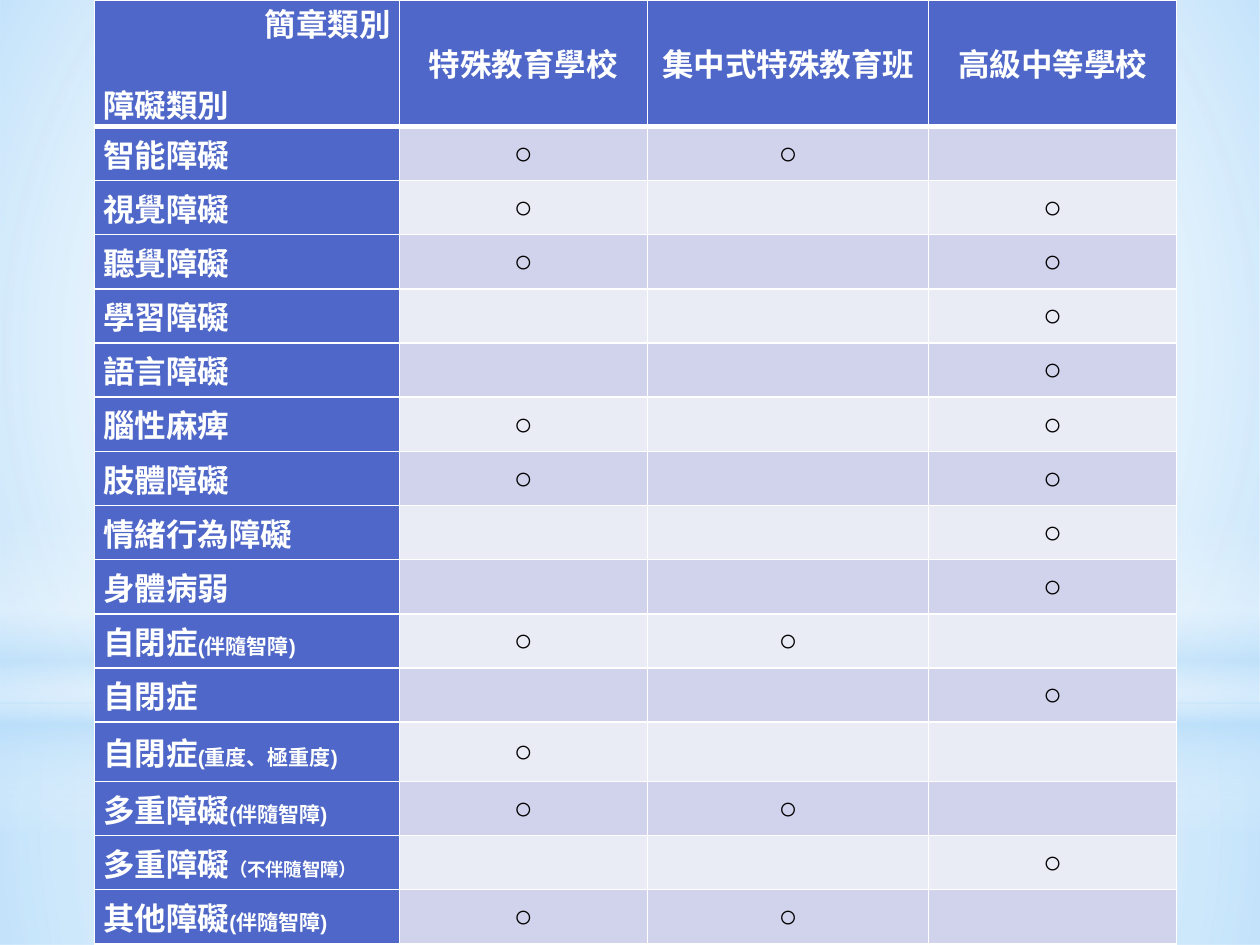
import pptx
import pptx.dml.color
import pptx.enum.shapes
import pptx.enum.text
import pptx.oxml
import pptx.oxml.ns
import pptx.util
from dataclasses import dataclass

Inches = pptx.util.Inches
Pt = pptx.util.Pt
Align = pptx.enum.text.PP_ALIGN
Shape = pptx.enum.shapes.MSO_SHAPE


@dataclass(frozen=True)
class Theme:
    """Colours, font and type sizes of the slide."""
    font: str = "Arial"
    white: str = "FFFFFF"
    black: str = "000000"
    sky: str = "B4DCFA"
    head: str = "4E67C8"
    bands: tuple = ("D0D3EB", "E9EBF5")
    size: float = 18
    note: float = 12
    small: float = 10.5


THEME = Theme()
COLS = (2.42, 1.97, 2.23, 1.97)
HEADS = ("特殊教育學校", "集中式特殊教育班", "高級中等學校")
ROWS = (
    ("智能障礙", "", (1, 2)),
    ("視覺障礙", "", (1, 3)),
    ("聽覺障礙", "", (1, 3)),
    ("學習障礙", "", (3,)),
    ("語言障礙", "", (3,)),
    ("腦性麻痺", "", (1, 3)),
    ("肢體障礙", "", (1, 3)),
    ("情緒行為障礙", "", (3,)),
    ("身體病弱", "", (3,)),
    ("自閉症", "(伴隨智障)", (1, 2)),
    ("自閉症", "", (3,)),
    ("自閉症", "(重度、極重度)", (1,)),
    ("多重障礙", "(伴隨智障)", (1, 2)),
    ("多重障礙", "（不伴隨智障）", (3,)),
    ("其他障礙", "(伴隨智障)", (1, 2)),
)
TALL = 12


def rgb(code):
    """Turn a hex code into a colour."""
    return pptx.dml.color.RGBColor.from_string(code)


def glow(slide, kind, box, stops, angle=None):
    """Add a shape with a translucent gradient, radial unless an angle is given."""
    shape = slide.shapes.add_shape(kind, *map(Inches, box))
    shape.shadow.inherit = False
    shape.line.fill.background()
    shape.fill.background()
    marks = "".join(
        f'<a:gs pos="{pos * 1000}"><a:srgbClr val="{code}">'
        f'<a:alpha val="{alpha * 1000}"/></a:srgbClr></a:gs>'
        for pos, code, alpha in stops)
    if angle is None:
        way = ('<a:path path="circle"><a:fillToRect l="50000" t="50000" '
               'r="50000" b="50000"/></a:path>')
    else:
        way = f'<a:lin ang="{angle * 60000}" scaled="0"/>'
    grad = pptx.oxml.parse_xml(
        f'<a:gradFill {pptx.oxml.ns.nsdecls("a")} rotWithShape="1">'
        f'<a:gsLst>{marks}</a:gsLst>{way}</a:gradFill>')
    props = shape.element.spPr
    props.replace(props.find(pptx.oxml.ns.qn("a:noFill")), grad)


def backdrop(slide):
    """Add the pale sky and its horizon."""
    white, sky = THEME.white, THEME.sky
    glow(slide, Shape.RECTANGLE, (0, 5.58, 10, 1.92),
         ((0, white, 91), (37, white, 76), (100, sky, 79)))
    glow(slide, Shape.RECTANGLE, (0, 0, 10, 5.58),
         ((0, white, 89), (48, white, 62), (100, sky, 79)))
    glow(slide, Shape.RECTANGLE, (0, 4.12, 10, 2.5),
         ((0, white, 0), (29, white, 30), (45, sky, 40),
          (55, white, 26), (65, sky, 60), (100, white, 0)), 90)
    glow(slide, Shape.OVAL, (0, 1.75, 10, 5.58),
         ((0, white, 100), (56, white, 0)))


def border(cell, top, bottom):
    """Draw white cell borders, with top and bottom widths in points."""
    props = cell._tc.get_or_add_tcPr()
    sides = (("L", 1), ("R", 1), ("T", top), ("B", bottom))
    for spot, (side, width) in enumerate(sides):
        props.insert(spot, pptx.oxml.parse_xml(
            f'<a:ln{side} {pptx.oxml.ns.nsdecls("a")} w="{Pt(width)}">'
            f'<a:solidFill><a:srgbClr val="{THEME.white}"/></a:solidFill>'
            f'</a:ln{side}>'))


def style(run, size, color, bold):
    """Format one run."""
    font = run.font
    font.name, font.size, font.bold = THEME.font, Pt(size), bold
    font.color.rgb = rgb(color)


def write(cell, text, align, color=THEME.white, bold=True):
    """Set the cell text and format each line."""
    frame = cell.text_frame
    frame.text = text
    for para in frame.paragraphs:
        para.alignment = align
        para.font.size = Pt(THEME.size)
        for run in para.runs:
            style(run, THEME.size, color, bold)


def corner(cell):
    """Label both axes in the corner cell."""
    write(cell, "簡章類別\n障礙類別", Align.LEFT)
    first, last = cell.text_frame.paragraphs
    first.alignment = Align.RIGHT
    last.space_before = Pt(20)


def label(cell, name, note):
    """Write a row name with its smaller note."""
    write(cell, name, Align.LEFT)
    if note:
        run = cell.text_frame.paragraphs[0].add_run()
        run.text = note
        size = THEME.small if note.startswith("（") else THEME.note
        style(run, size, THEME.white, True)


def dress(cell, row, col):
    """Set the fill, insets and borders of a cell."""
    cell.margin_left = cell.margin_right = Inches(0.07)
    cell.margin_top = cell.margin_bottom = 0
    cell.vertical_anchor = pptx.enum.text.MSO_ANCHOR.MIDDLE
    cell.fill.solid()
    plain = row and col
    cell.fill.fore_color.rgb = rgb(THEME.bands[(row - 1) % 2] if plain else THEME.head)
    border(cell, 3 if row == 1 else 1, 1 if row else 3)


def grid(slide):
    """Add the table of disabilities and school types."""
    count = len(ROWS) + 1
    table = slide.shapes.add_table(
        count, len(COLS), Inches(0.75), 0, Inches(sum(COLS)), Inches(7.49)).table
    for col, width in enumerate(COLS):
        table.columns[col].width = Inches(width)
    for row in range(count):
        table.rows[row].height = Inches({0: 1, TALL: 0.47}.get(row, 0.43))
        for col in range(len(COLS)):
            dress(table.cell(row, col), row, col)
    corner(table.cell(0, 0))
    for col, text in enumerate(HEADS, 1):
        write(table.cell(0, col), text, Align.CENTER)
    for row, (name, note, marks) in enumerate(ROWS, 1):
        label(table.cell(row, 0), name, note)
        for col in range(1, len(COLS)):
            mark = "○" if col in marks else ""
            write(table.cell(row, col), mark, Align.CENTER, THEME.black, False)


def main():
    """Build and save the slide."""
    deck = pptx.Presentation()
    deck.slide_width, deck.slide_height = Inches(10), Inches(7.5)
    slide = deck.slides.add_slide(deck.slide_layouts[6])
    backdrop(slide)
    grid(slide)
    deck.save("out.pptx")


if __name__ == "__main__":
    main()
